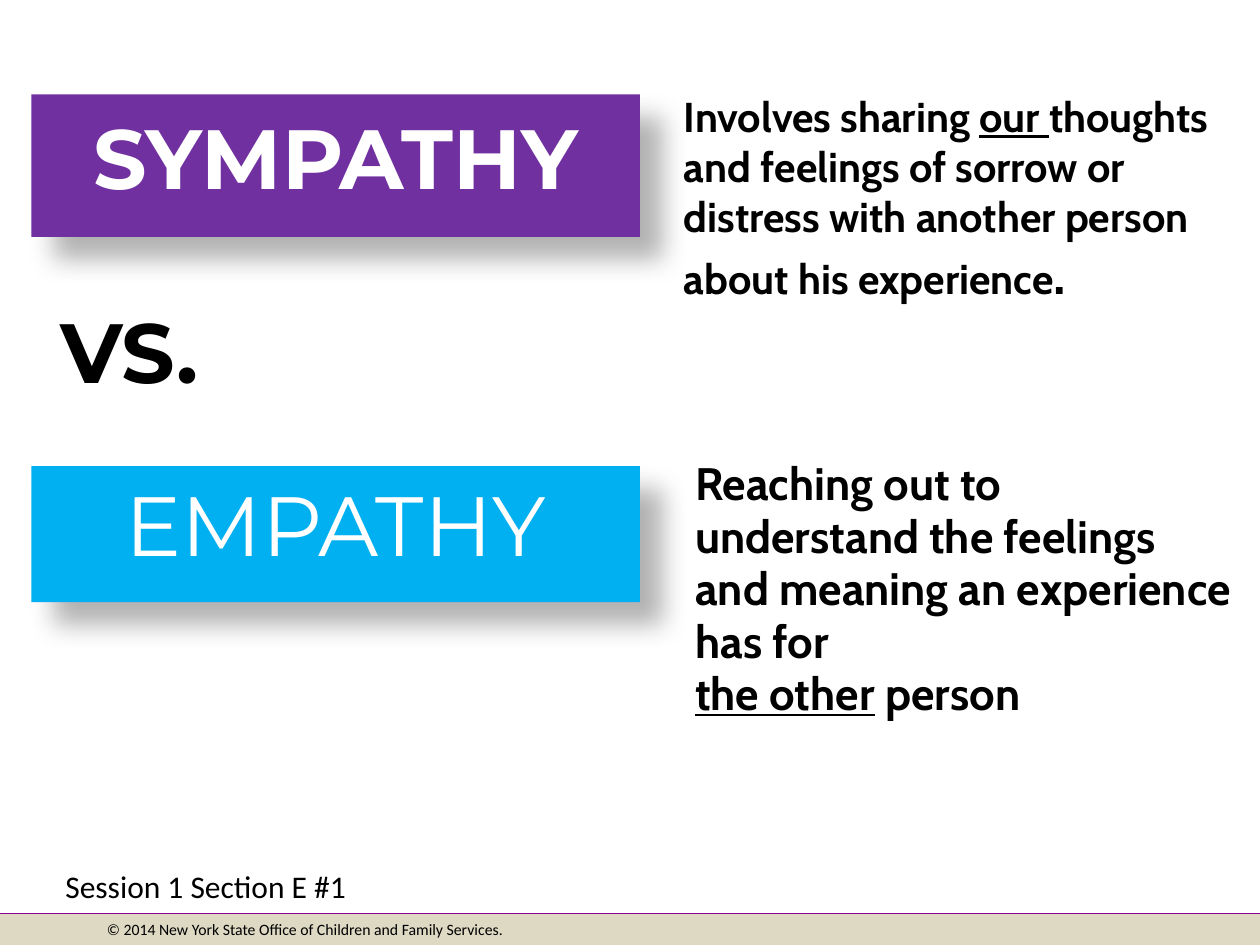
from lxml import etree
from pptx import Presentation
from pptx.dml.color import RGBColor
from pptx.enum.shapes import MSO_CONNECTOR as LINE, MSO_SHAPE as SHAPE
from pptx.enum.text import MSO_ANCHOR as ANCHOR, PP_ALIGN as ALIGN
from pptx.oxml import parse_xml
from pptx.oxml.ns import nsdecls, qn
from pptx.util import Inches, Pt

BLACK = RGBColor(0, 0, 0)
WHITE = RGBColor(0xFF, 0xFF, 0xFF)
PURPLE = RGBColor(0x70, 0x30, 0xA0)
BLUE = RGBColor(0x00, 0xB0, 0xF0)
TAN = RGBColor(0xDD, 0xD9, 0xC3)
RULE = RGBColor(0x8D, 0x00, 0x99)


def write(shape, paras, font, size, color=BLACK, bold=False, wrap=True,
          anchor=ANCHOR.TOP, align=ALIGN.LEFT, pitch=None, after=None, hang=None):
    """Fill a shape; each paragraph is a list of (text, underline, own size) runs."""
    frame = shape.text_frame
    frame.word_wrap = wrap
    frame.vertical_anchor = anchor
    for i, runs in enumerate(paras):
        para = frame.add_paragraph() if i else frame.paragraphs[0]
        para.alignment = align
        if pitch:
            para.line_spacing = Pt(pitch)
        if after:
            para.space_after = Pt(after)
        if hang:
            props = para._p.get_or_add_pPr()
            props.set("marL", str(Inches(hang)))
            props.set("indent", str(-Inches(hang)))
        for text, under, own in runs:
            run = para.add_run()
            run.text = text
            face = run.font
            face.name, face.size, face.bold = font, Pt(own or size), bold
            face.underline = under
            face.color.rgb = color


def block(left, top, width, height, fill):
    rect = slide.shapes.add_shape(SHAPE.RECTANGLE, Inches(left), Inches(top),
                                  Inches(width), Inches(height))
    rect.shadow.inherit = False
    rect.fill.solid()
    rect.fill.fore_color.rgb = fill
    rect.line.fill.background()
    return rect


deck = Presentation()
deck.slide_width, deck.slide_height = Inches(10), Inches(7.5)
slide = deck.slides.add_slide(deck.slide_layouts[6])

# Footer band and its rule
block(0, 7.25, 10, 0.25, TAN)
rule = slide.shapes.add_connector(LINE.STRAIGHT, Inches(10), Inches(7.25),
                                  Inches(0), Inches(7.25))
rule.line.color.rgb = RULE
rule.line.width = Pt(0.75)
etree.SubElement(rule._element.spPr, qn("a:effectLst"))

# Banners with soft shadows
banners = [
    ("SYMPATHY", 0.75, 1.13, PURPLE,
     dict(bold=True, anchor=ANCHOR.MIDDLE, pitch=46, after=25)),
    ("EMPATHY", 3.7, 1.08, BLUE, {}),
]
for word, top, height, fill, style in banners:
    banner = block(0.25, top, 4.83, height, fill)
    banner._element.spPr.find(qn("a:effectLst")).append(parse_xml(
        f'<a:outerShdw {nsdecls("a")} blurRad="{Pt(15)}" dist="{Pt(18)}" '
        'dir="2700000" algn="tl" rotWithShape="0"><a:srgbClr val="000000">'
        '<a:alpha val="30000"/></a:srgbClr></a:outerShdw>'))
    write(banner, [[(word, None, None)]], "Montserrat", 48, color=WHITE,
          align=ALIGN.CENTER, hang=0.38, **style)

# Text boxes: place, paragraphs, font, size, format
notes = [
    ((0.75, 7.25, 9.25, 0.25),
     [[("© 2014 New York State Office of Children and Family Services.", None, None)]],
     "Calibri", 9, {}),
    ((0.38, 2.33, 1.79, 0.91), [[("VS.", None, None)]],
     "Montserrat", 48, dict(bold=True)),
    ((0.42, 6.83, 2.82, 0.4), [[("Session 1 Section E #1", None, None)]],
     "Calibri", 18, dict(wrap=False)),
    ((5.33, 0.67, 4.42, 2.26),
     [[("Involves sharing ", None, None), ("our ", True, None),
       ("thoughts and feelings of sorrow or distress with another person "
        "about his experience", None, None), (".", None, 30.8)]],
     "Cabin", 23.8, dict(bold=True, after=25)),
    ((5.42, 3.58, 4.5, 2.2),
     [[("Reaching out to", None, None)],
      [("understand the feelings and meaning an experience has for", None, None)],
      [("the other", True, None), (" person", None, None)]],
     "Cabin", 26, dict(bold=True, pitch=30)),
]
for place, paras, font, size, style in notes:
    box = slide.shapes.add_textbox(*map(Inches, place))
    write(box, paras, font, size, **style)

deck.save("out.pptx")
